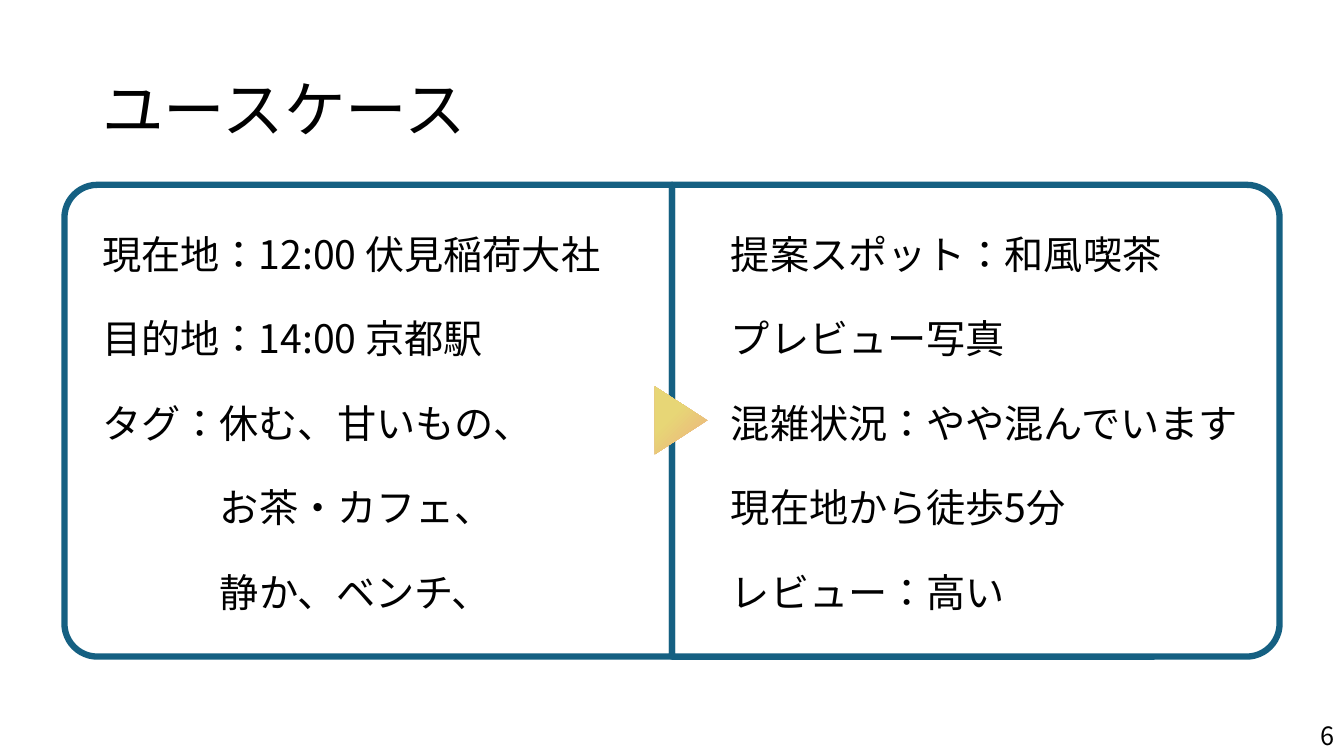
from pptx import Presentation
from pptx.dml.color import RGBColor
from pptx.enum.lang import MSO_LANGUAGE_ID as Language
from pptx.enum.shapes import MSO_SHAPE as Preset
from pptx.enum.text import MSO_ANCHOR as Anchor, PP_ALIGN as Align
from pptx.oxml.ns import qn
from pptx.util import Pt

FONT = "Noto Sans CJK JP"
INDENT = 84


def color(value):
    return RGBColor.from_string(value)


def add_text(left, top, width, height, lines, size):
    box = slide.shapes.add_textbox(Pt(left), Pt(top), Pt(width), Pt(height))
    frame = box.text_frame
    frame.word_wrap = True
    frame.text = "\n".join(lines)
    for paragraph in frame.paragraphs:
        for run in paragraph.runs:
            run.font.size = Pt(size)
            run.font.name = FONT
            run.font.language_id = Language.JAPANESE
            run.font.color.rgb = color("000000")
            east_asian = run._r.get_or_add_rPr().makeelement(qn("a:ea"), {"typeface": FONT})
            run.font._element.find(qn("a:latin")).addnext(east_asian)
    return frame


presentation = Presentation()
presentation.slide_width = Pt(960)
presentation.slide_height = Pt(540)
slide = presentation.slides.add_slide(presentation.slide_layouts[6])

middle_x, middle_y = 480, 300.5
panel_width, panel_height = 434, 337
for side, rotation in ((-1, 270), (1, 90)):
    center_x = middle_x + side * panel_width / 2
    panel = slide.shapes.add_shape(
        Preset.ROUND_2_SAME_RECTANGLE,
        Pt(center_x - panel_height / 2), Pt(middle_y - panel_width / 2),
        Pt(panel_height), Pt(panel_width))
    panel.rotation = rotation
    panel.adjustments[0] = 0.07
    panel.adjustments[1] = 0
    panel.shadow.inherit = False
    panel.fill.background()
    panel.line.color.rgb = color("156082")
    panel.line.width = Pt(4.5)

title = add_text(66, 28, 864, 104.4, ["ユースケース"], 44)
title.vertical_anchor = Anchor.MIDDLE
title.paragraphs[0].line_spacing = 0.9

page_number = add_text(935.5, 511, 24.5, 29, ["6"], 18)
page_number.word_wrap = False
page_number.paragraphs[0].alignment = Align.RIGHT

request = add_text(66, 144, 414, 343, [
    "現在地：12:00 伏見稲荷大社",
    "目的地：14:00 京都駅",
    "タグ：休む、甘いもの、",
    "お茶・カフェ、",
    "静か、ベンチ、",
], 28)
suggestion = add_text(515, 144, 379.5, 343, [
    "提案スポット：和風喫茶",
    "プレビュー写真",
    "混雑状況：やや混んでいます",
    "現在地から徒歩5分",
    "レビュー：高い",
], 28)
for frame in (request, suggestion):
    for paragraph in frame.paragraphs:
        paragraph.line_spacing = Pt(50.4)
        paragraph.space_before = Pt(10)
for paragraph in request.paragraphs[3:]:
    paragraph._p.get_or_add_pPr().set("marL", str(Pt(INDENT)))

arrow = slide.shapes.add_shape(Preset.ISOSCELES_TRIANGLE, Pt(462.2), Pt(281.5), Pt(48.5), Pt(37.5))
arrow.rotation = 90
arrow.shadow.inherit = False
arrow.line.fill.background()
arrow.fill.gradient()
arrow.fill.gradient_angle = 225
for stop, position, value in zip(arrow.fill.gradient_stops, (0, 0.62), ("EEAE7F", "E7D676")):
    stop.position = position
    stop.color.rgb = color(value)

presentation.save("out.pptx")
